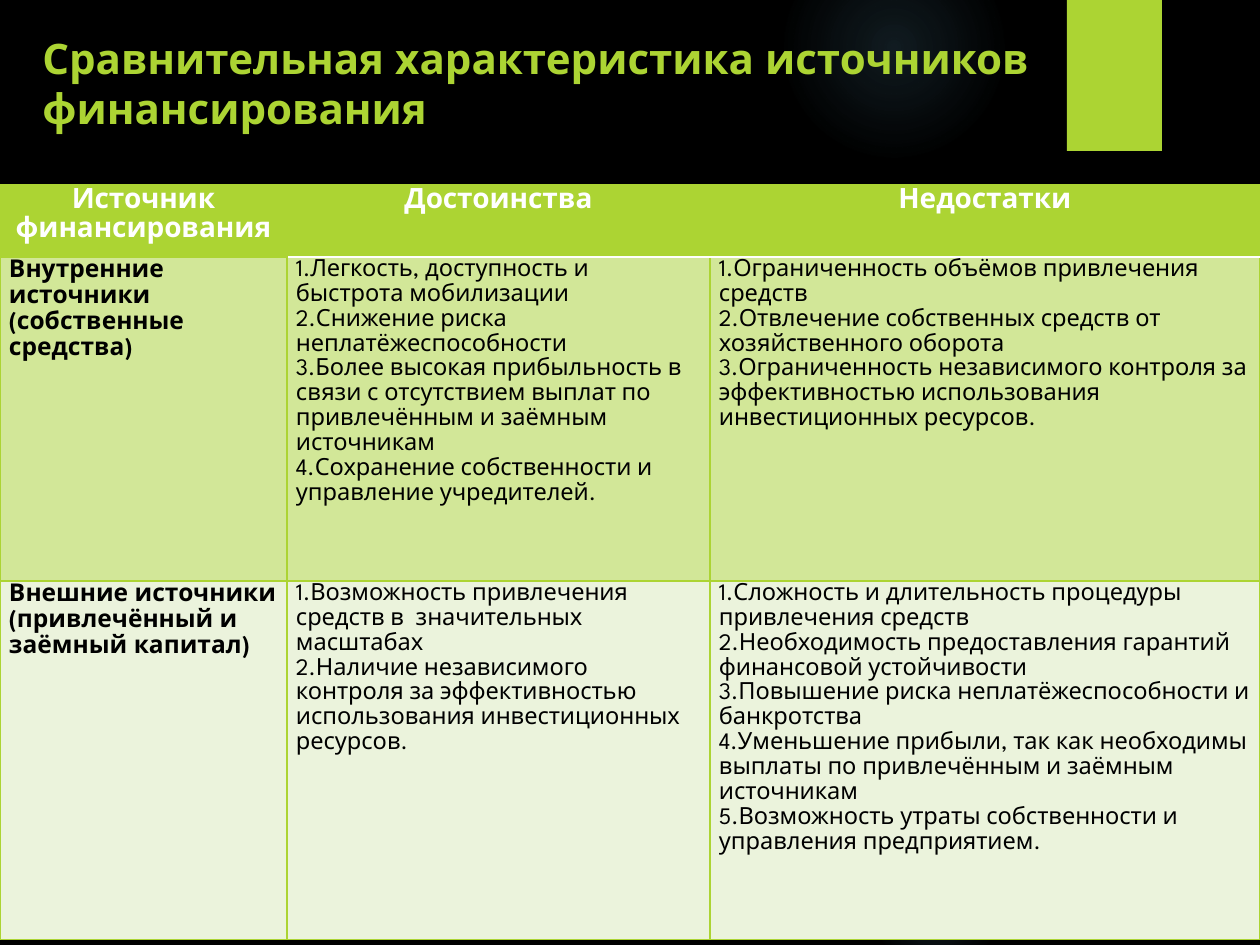
from dataclasses import dataclass

from lxml import etree
from pptx import Presentation
from pptx.dml.color import RGBColor
from pptx.enum.shapes import MSO_SHAPE
from pptx.enum.text import PP_ALIGN
from pptx.oxml.ns import qn
from pptx.util import Emu, Pt

RECT, OVAL = MSO_SHAPE.RECTANGLE, MSO_SHAPE.OVAL
LEFT, CENTER = PP_ALIGN.LEFT, PP_ALIGN.CENTER
EMU_PER_PX = 914400 / 126


@dataclass(frozen=True)
class Theme:
    font: str = "League Spartan"
    background: str = "000000"
    accent: str = "ACD433"
    glow: str = "7AC4F0"
    white: str = "FFFFFF"
    ink: str = "000000"
    bands: tuple = ("D2E798", "EBF3DC")
    title_size: float = 24
    header_size: float = 16
    source_size: float = 14
    body_size: float = 13.5
    thin: float = 0.75
    thick: float = 1.5


THEME = Theme()

TITLE = "Сравнительная характеристика источников финансирования"
HEADERS = ["Источник финансирования", "Достоинства", "Недостатки"]
ROWS = [
    [
        ["Внутренние источники", "(собственные средства)"],
        [
            "1.Легкость, доступность и быстрота мобилизации",
            "2.Снижение риска неплатёжеспособности",
            "3.Более высокая прибыльность в связи с отсутствием выплат по привлечённым и заёмным источникам",
            "4.Сохранение собственности и управление учредителей.",
        ],
        [
            "1.Ограниченность объёмов привлечения средств",
            "2.Отвлечение собственных средств от хозяйственного оборота",
            "3.Ограниченность независимого контроля за эффективностью использования инвестиционных ресурсов.",
        ],
    ],
    [
        ["Внешние источники (привлечённый и заёмный капитал)"],
        [
            "1.Возможность привлечения средств в  значительных масштабах",
            "2.Наличие независимого контроля за эффективностью использования инвестиционных ресурсов.",
        ],
        [
            "1.Сложность и длительность процедуры привлечения средств",
            "2.Необходимость предоставления гарантий финансовой устойчивости",
            "3.Повышение риска неплатёжеспособности и банкротства",
            "4.Уменьшение прибыли, так как необходимы выплаты по привлечённым и заёмным источникам",
            "5.Возможность утраты собственности и управления предприятием.",
        ],
    ],
]
COL_WIDTHS = [287, 423, 550]
ROW_HEIGHTS = [72, 324, 359]


def px(n):
    return Emu(round(n * EMU_PER_PX))


def rgb(color):
    return RGBColor.from_string(color)


def write_text(tf, paragraphs, size, color, bold=False, align=LEFT, spacing=None):
    tf.word_wrap = True
    for i, text in enumerate(paragraphs):
        p = tf.paragraphs[0] if i == 0 else tf.add_paragraph()
        p.alignment = align
        p.line_spacing = spacing
        r = p.add_run()
        r.text = text
        r.font.name = THEME.font
        r.font.size = Pt(size)
        r.font.bold = bold
        r.font.color.rgb = rgb(color)


def add_plain_shape(slide, kind, left, top, width, height, color):
    s = slide.shapes.add_shape(kind, px(left), px(top), px(width), px(height))
    s.shadow.inherit = False
    s.fill.solid()
    s.fill.fore_color.rgb = rgb(color)
    s.line.fill.background()
    return s


def add_glow(slide, left, top, size, stops):
    """Circle that fades outwards; stops are (position %, opacity %)."""
    s = add_plain_shape(slide, OVAL, left, top, size, size, THEME.glow)
    solid = s._element.spPr.find(qn("a:solidFill"))
    grad = etree.Element(qn("a:gradFill"), rotWithShape="1")
    stop_list = etree.SubElement(grad, qn("a:gsLst"))
    for position, opacity in stops:
        gs = etree.SubElement(stop_list, qn("a:gs"), pos=str(position * 1000))
        clr = etree.SubElement(gs, qn("a:srgbClr"), val=THEME.glow)
        etree.SubElement(clr, qn("a:alpha"), val=str(opacity * 1000))
    circle = etree.SubElement(grad, qn("a:path"), path="circle")
    etree.SubElement(circle, qn("a:fillToRect"), l="50000", t="50000", r="50000", b="50000")
    solid.getparent().replace(solid, grad)


def set_border(cell, side, color, width):
    ln = etree.SubElement(cell._tc.get_or_add_tcPr(), qn(f"a:ln{side}"), w=str(Pt(width)))
    fill = etree.SubElement(ln, qn("a:solidFill"))
    etree.SubElement(fill, qn("a:srgbClr"), val=color)


def style_cell(cell, row, col, fill):
    # The source column ends in a thick rule; a white one runs under the other headers
    thin, thick = (THEME.accent, THEME.thin), (THEME.accent, THEME.thick)
    under_header = (THEME.white, THEME.thick) if col else thin
    borders = {
        "L": thick if row and col == 1 else thin,
        "R": thick if row and col == 0 else thin,
        "T": under_header if row == 1 else thin,
        "B": under_header if row == 0 else thin,
    }
    for side, (color, width) in borders.items():
        set_border(cell, side, color, width)
    cell.fill.solid()
    cell.fill.fore_color.rgb = rgb(fill)
    cell.margin_left = cell.margin_right = px(9)
    cell.margin_top = cell.margin_bottom = 0


def add_comparison_table(slide, left, top):
    frame = slide.shapes.add_table(
        len(ROW_HEIGHTS), len(COL_WIDTHS), px(left), px(top),
        px(sum(COL_WIDTHS)), px(sum(ROW_HEIGHTS)))
    table = frame.table
    table.first_row = table.horz_banding = False
    for column, width in zip(table.columns, COL_WIDTHS):
        column.width = px(width)
    for row, height in zip(table.rows, ROW_HEIGHTS):
        row.height = px(height)

    # Header row
    for c, text in enumerate(HEADERS):
        cell = table.cell(0, c)
        style_cell(cell, 0, c, THEME.accent)
        write_text(cell.text_frame, [text], THEME.header_size, THEME.white,
                   bold=True, align=CENTER, spacing=1.15)

    # One row per source of financing
    for r, (contents, band) in enumerate(zip(ROWS, THEME.bands), start=1):
        for c, paragraphs in enumerate(contents):
            cell = table.cell(r, c)
            style_cell(cell, r, c, band)
            size = THEME.body_size if c else THEME.source_size
            write_text(cell.text_frame, paragraphs, size, THEME.ink,
                       bold=c == 0, spacing=1.15)


def add_title(slide, left, top, width, height):
    s = slide.shapes.add_textbox(px(left), px(top), px(width), px(height))
    write_text(s.text_frame, [TITLE], THEME.title_size, THEME.accent, bold=True)


def main():
    prs = Presentation()
    prs.slide_width, prs.slide_height = px(1260), px(945)
    slide = prs.slides.add_slide(prs.slide_layouts[6])

    # Background with soft glows and the accent tab
    slide.background.fill.solid()
    slide.background.fill.fore_color.rgb = rgb(THEME.background)
    add_glow(slide, 784, -63, 220, [(0, 14), (36, 7), (73, 0)])
    add_glow(slide, 868, 840, 136, [(0, 14), (36, 7), (66, 0)])
    add_plain_shape(slide, RECT, 1067, 0, 95, 151, THEME.accent)

    # Content
    add_comparison_table(slide, 0, 185)
    add_title(slide, 30, 26, 1181, 115)
    prs.save("out.pptx")


if __name__ == "__main__":
    main()
